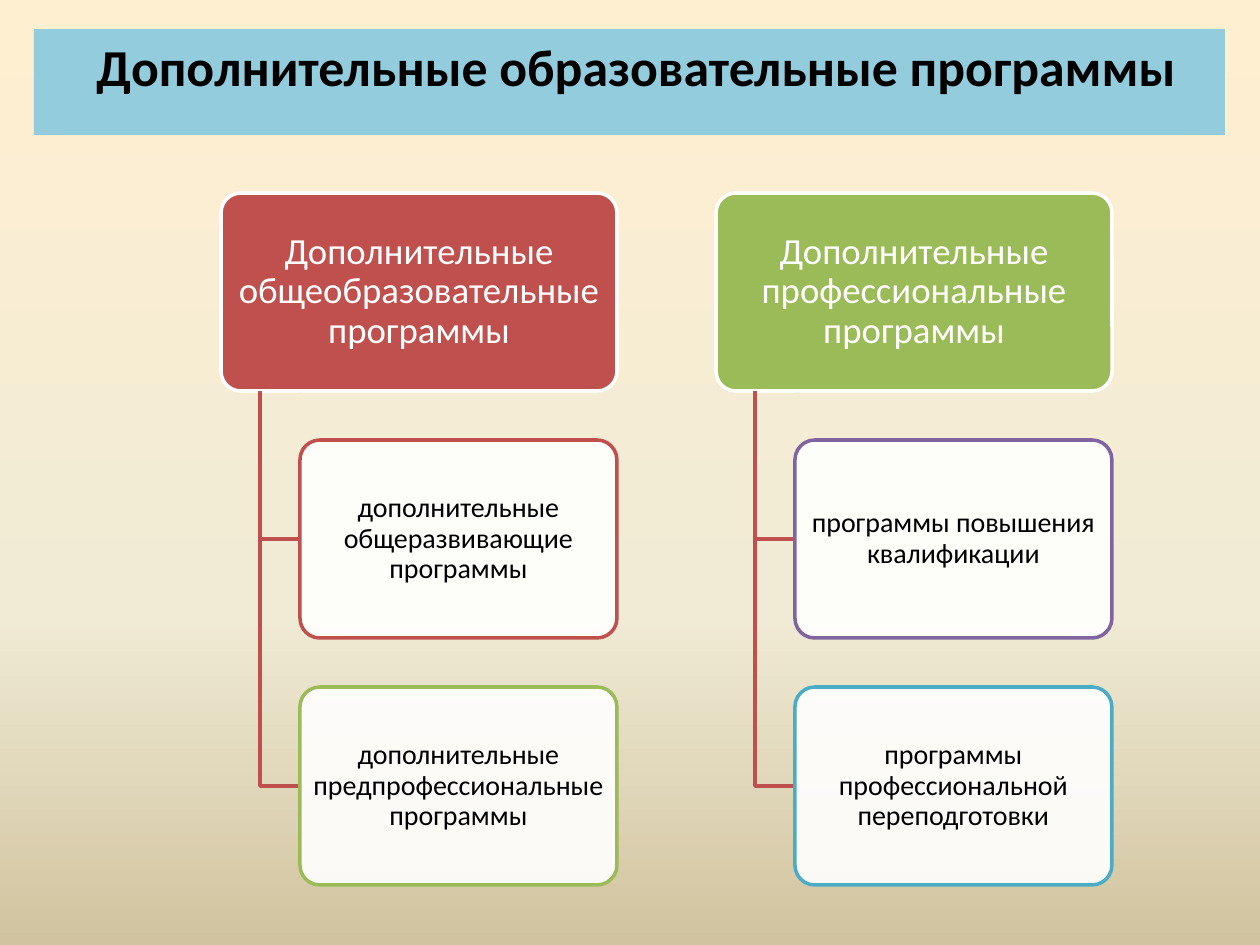
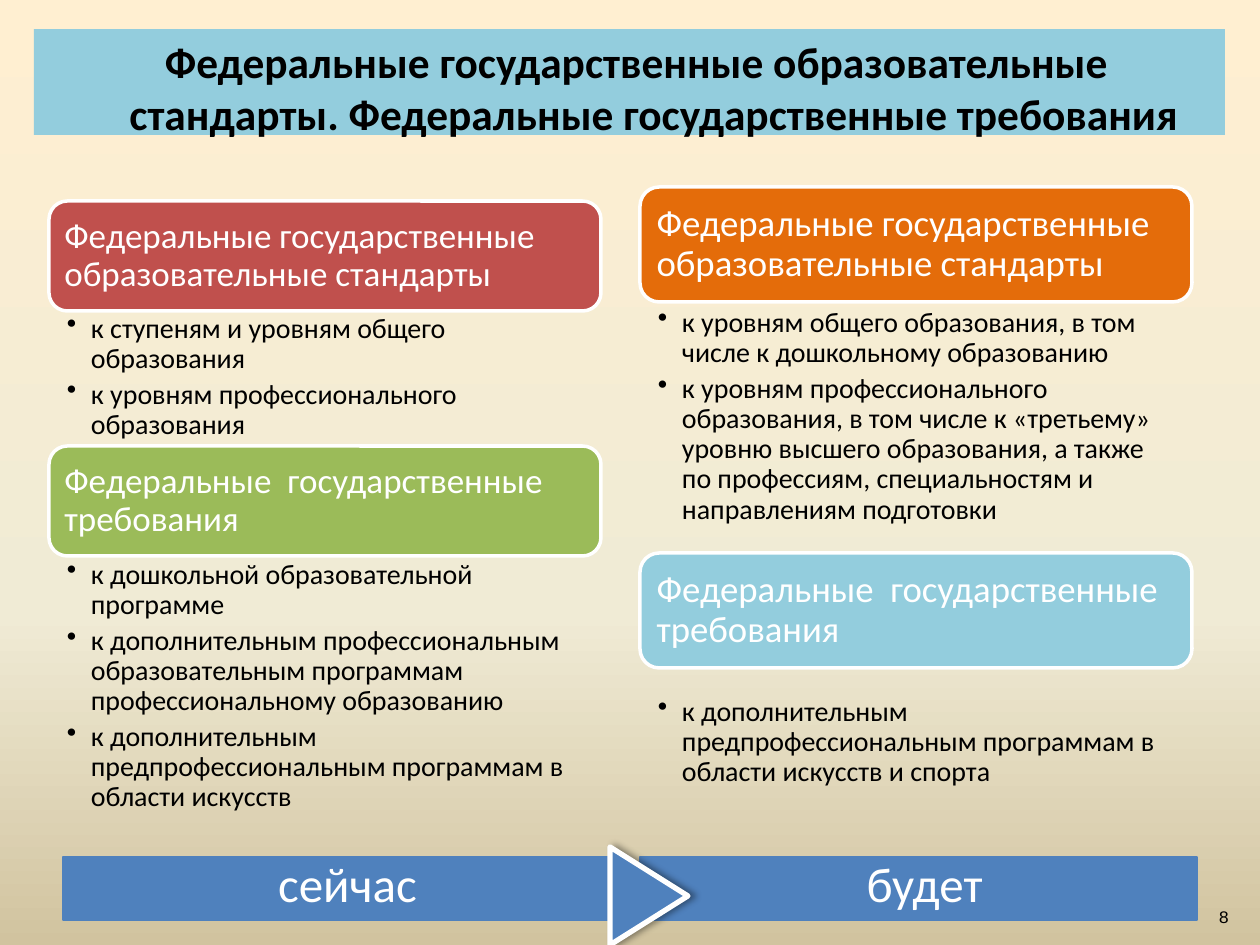
from copy import deepcopy

from lxml import etree
from pptx import Presentation
from pptx.dml.color import RGBColor
from pptx.enum.shapes import MSO_SHAPE
from pptx.enum.text import MSO_ANCHOR, PP_ALIGN
from pptx.oxml.ns import qn
from pptx.util import Emu, Pt

RECTANGLE = MSO_SHAPE.RECTANGLE
ROUNDED = MSO_SHAPE.ROUNDED_RECTANGLE
RIGHT_ARROW = MSO_SHAPE.RIGHT_ARROW
TOP, MIDDLE, BOTTOM = MSO_ANCHOR.TOP, MSO_ANCHOR.MIDDLE, MSO_ANCHOR.BOTTOM
LEFT, CENTER, RIGHT = PP_ALIGN.LEFT, PP_ALIGN.CENTER, PP_ALIGN.RIGHT

PIXELS_PER_INCH = 126
SLIDE_SIZE = (1260, 945)
FONT = "Calibri"
NUMBER_FONT = "Courier New"
COLORS = {
    "black": "000000",
    "white": "FFFFFF",
    "sky": "93CDDD",
    "blue": "4F81BD",
    "red": "C0504D",
    "green": "9BBB59",
    "purple": "8064A2",
    "teal": "4BACC6",
    "orange": "E46C0A",
}
BACKGROUND_STOPS = [(0, "FFEFD1"), (0.65, "F0EBD5"), (1, "D1C39F")]

TITLE_BOX = (34, 29, 1191, 106)
BRANCH_TOP = 193
BRANCH_SIZE = (396, 198)
BRANCH_STEP = 247
BRANCH_INDENT = 79
COLUMN_WIDTH = 552

BRANCHES = [
    (221, "Дополнительные общеобразовательные программы", "red", [
        ("дополнительные общеразвивающие программы", "red"),
        ("дополнительные предпрофессиональные программы", "green"),
    ]),
    (716, "Дополнительные профессиональные программы", "green", [
        ("программы повышения квалификации", "purple"),
        ("программы профессиональной переподготовки", "teal"),
    ]),
]

STANDARDS = "Федеральные государственные образовательные стандарты"
REQUIREMENTS = "Федеральные  государственные  требования"
COLUMNS = [
    {"left": 49, "card_height": 110, "size": 20, "inset": 10, "sections": [
        (201, STANDARDS, "red", 310, 137, [
            "к ступеням и уровням общего образования",
            "к уровням профессионального образования",
        ]),
        (446, REQUIREMENTS, "green", 556, 268, [
            "к дошкольной образовательной программе",
            "к дополнительным профессиональным образовательным программам "
            "профессиональному образованию",
            "к дополнительным предпрофессиональным программам в области искусств",
        ]),
    ]},
    {"left": 640, "card_height": 115, "size": 21, "inset": 11, "sections": [
        (187, STANDARDS, "orange", 304, 233, [
            "к уровням общего образования, в том числе к дошкольному образованию",
            "к уровням профессионального образования, в том числе к «третьему» "
            "уровню высшего образования, а также по профессиям, специальностям "
            "и направлениям подготовки",
        ]),
        (553, REQUIREMENTS, "sky", 693, 102, [
            "к дополнительным предпрофессиональным программам в области "
            "искусств и спорта",
        ]),
    ]},
]


def px(length):
    return Emu(round(length * 914400 / PIXELS_PER_INCH))


def rgb(name):
    return RGBColor.from_string(COLORS[name])


def write_text(shape, lines, size, color="black", align=LEFT, anchor=MIDDLE,
               insets=(13, 6, 13, 6), spacing=0.9, bold=False, font=FONT):
    frame = shape.text_frame
    frame.text = "\n".join(lines)
    frame.word_wrap = True
    frame.vertical_anchor = anchor
    frame.margin_left, frame.margin_top, frame.margin_right, frame.margin_bottom = map(px, insets)
    for paragraph in frame.paragraphs:
        paragraph.alignment = align
        paragraph.line_spacing = spacing
        for run in paragraph.runs:
            run.font.size = Pt(size)
            run.font.name = font
            run.font.bold = bold
            run.font.color.rgb = rgb(color)
    return frame.paragraphs


def indent(paragraph, margin, first_line):
    properties = paragraph._p.get_or_add_pPr()
    properties.set("marL", str(px(margin)))
    properties.set("indent", str(px(first_line)))
    return properties


def add_box(slide, kind, box, fill, line=None, line_width=2):
    shape = slide.shapes.add_shape(kind, *map(px, box))
    shape.shadow.inherit = False
    shape.fill.solid()
    shape.fill.fore_color.rgb = rgb(fill)
    if line:
        shape.line.color.rgb = rgb(line)
        shape.line.width = Pt(line_width)
    else:
        shape.line.fill.background()
    return shape


def set_alpha(parent, percent):
    color = next(parent.iter(qn("a:srgbClr")))
    etree.SubElement(color, qn("a:alpha")).set("val", str(percent * 1000))


def paint_background(master):
    fill = master.background.fill
    fill.gradient()
    fill.gradient_angle = 270
    stop_list = next(master.element.iter(qn("a:gsLst")))
    stop_list.append(deepcopy(stop_list[0]))
    for stop, (position, color) in zip(fill.gradient_stops, BACKGROUND_STOPS):
        stop.position = position
        stop.color.rgb = RGBColor.from_string(color)


def add_title(slide, text, size):
    band = add_box(slide, RECTANGLE, TITLE_BOX, "sky")
    paragraph, = write_text(band, [text], size, align=CENTER, anchor=TOP,
                            spacing=1.0, bold=True)
    paragraph.space_before = Pt(round(size * 0.2))
    indent(paragraph, 50, -35)


def add_elbow(slide, left, top, width, height):
    builder = slide.shapes.build_freeform(px(left), px(top))
    builder.add_line_segments([
        (px(left), px(top + height)),
        (px(left + width), px(top + height)),
    ], close=False)
    elbow = builder.convert_to_shape()
    elbow.shadow.inherit = False
    elbow.fill.background()
    elbow.line.color.rgb = rgb("red")
    elbow.line.width = Pt(2)


def add_branch(slide, left, top, heading, color, children):
    width, height = BRANCH_SIZE
    parent = add_box(slide, ROUNDED, (left, top, width, height), color, "white")
    parent.adjustments[0] = 0.1
    write_text(parent, [heading], 21, "white", CENTER, insets=(5, 4, 5, 4))
    trunk = BRANCH_INDENT // 2
    for number, (text, outline) in enumerate(children, 1):
        child_top = top + number * BRANCH_STEP
        add_elbow(slide, left + trunk, top + height, BRANCH_INDENT - trunk,
                  child_top - top - height // 2)
        box = (left + BRANCH_INDENT, child_top, width - BRANCH_INDENT, height)
        child = add_box(slide, ROUNDED, box, "white", outline)
        child.adjustments[0] = 0.1
        set_alpha(child.element.spPr.find(qn("a:solidFill")), 90)
        write_text(child, [text], 16, align=CENTER, insets=(4, 3, 4, 3))


def add_bullets(slide, box, lines):
    shape = slide.shapes.add_textbox(*map(px, box))
    for paragraph in write_text(shape, lines, 16, anchor=TOP, insets=(18, 4, 20, 4)):
        paragraph.space_after = Pt(3.2)
        properties = indent(paragraph, 24, -24)
        etree.SubElement(properties, qn("a:buChar")).set("char", "•")


def add_column(slide, left, card_height, size, inset, sections):
    for top, heading, color, list_top, list_height, lines in sections:
        box = (left, top, COLUMN_WIDTH, card_height)
        card = add_box(slide, ROUNDED, box, color, "white")
        write_text(card, [heading], size, "white", insets=(inset,) * 4)
        add_bullets(slide, (left, list_top, COLUMN_WIDTH, list_height), lines)


def add_timeline(slide, top):
    for left, text in ((63, "сейчас"), (640, "будет")):
        bar = add_box(slide, RECTANGLE, (left, top, 557, 63), "blue", "blue", 0.75)
        paragraph, = write_text(bar, [text], 28, "white", CENTER,
                                insets=(25, 6, 13, 6), spacing=0.8)
        paragraph.space_before = Pt(5.6)
    arrow = add_box(slide, RIGHT_ARROW, (610, top - 10, 78, 98), "blue", "white", 3)
    arrow.adjustments[0] = 0.43
    arrow.adjustments[1] = 1
    effects = arrow.element.spPr.find(qn("a:effectLst"))
    shadow = etree.SubElement(effects, qn("a:outerShdw"), blurRad=str(Pt(4)),
                              dist=str(Pt(3)), dir="0", rotWithShape="0")
    etree.SubElement(shadow, qn("a:srgbClr")).set("val", COLORS["black"])
    set_alpha(shadow, 40)


def add_page_number(slide, number):
    shape = slide.shapes.add_textbox(*map(px, (1192, 883, 50, 50)))
    write_text(shape, [number], 10, align=RIGHT, anchor=BOTTOM, spacing=1.0,
               font=NUMBER_FONT)


def build_programs(slide):
    add_title(slide, "Дополнительные образовательные программы", 29.6)
    for left, heading, color, children in BRANCHES:
        add_branch(slide, left, BRANCH_TOP, heading, color, children)


def build_standards(slide):
    add_timeline(slide, 857)
    add_page_number(slide, "8")
    add_title(slide, "Федеральные государственные образовательные стандарты. "
                     "Федеральные государственные требования", 24.8)
    for column in COLUMNS:
        add_column(slide, **column)


def main():
    presentation = Presentation()
    presentation.slide_width, presentation.slide_height = map(px, SLIDE_SIZE)
    paint_background(presentation.slide_master)
    blank = presentation.slide_layouts[6]
    for build in (build_programs, build_standards):
        build(presentation.slides.add_slide(blank))
    presentation.save("out.pptx")


if __name__ == "__main__":
    main()
